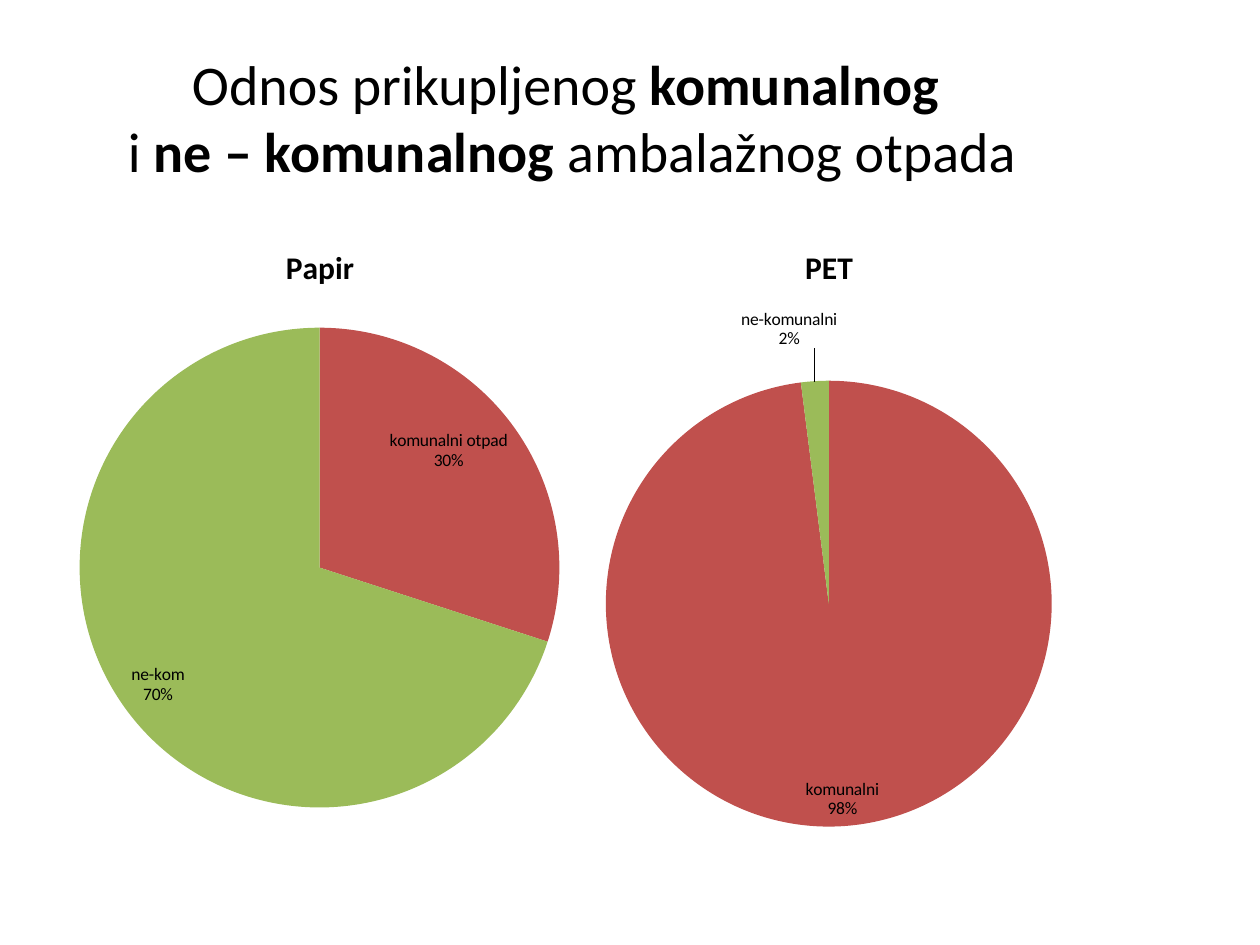
from pptx import Presentation
from pptx.chart.data import CategoryChartData as Data
from pptx.dml.color import RGBColor as RGB
from pptx.enum.chart import XL_CHART_TYPE as Kind, XL_LABEL_POSITION as Pos
from pptx.enum.text import MSO_ANCHOR as Anchor, PP_ALIGN as Align
from pptx.oxml import parse_xml
from pptx.oxml.ns import nsdecls
from pptx.util import Inches, Pt

COLORS = {"text": "000000", "blank": "4F81BD", "city": "C0504D", "other": "9BBB59"}
FONT = "Calibri"
TITLE = [
    [("Odnos prikupljenog ", False), ("komunalnog ", True)],
    [("i ", False), ("ne – komunalnog ", True), ("ambalažnog otpada", False)],
]
PIES = [
    {
        "title": "Papir",
        "box": (0.5, 1.75, 4.08, 4.92),
        "plot": (0.63, 2.6, 3.81, 3.81),
        "cats": ("Papir %", "komunalni otpad", "ne-kom"),
        "vals": (None, 30, 70),
        "shift": None,
    },
    {
        "title": "PET",
        "box": (4.58, 1.75, 4, 4.95),
        "plot": (4.81, 3.02, 3.54, 3.54),
        "cats": ("PET %", "komunalni", "ne-komunalni"),
        "vals": (None, 98, 2),
        "shift": (-0.05, -0.04),
    },
]


def style(font, size, bold=False):
    look = {"name": FONT, "size": Pt(size), "bold": bold}
    for key, val in look.items():
        setattr(font, key, val)
    font.color.rgb = RGB.from_string(COLORS["text"])


def add_title(slide):
    box = slide.shapes.add_textbox(*map(Inches, (0.5, 0.3, 8.08, 1.25)))
    frame = box.text_frame
    for key, val in {"word_wrap": True, "vertical_anchor": Anchor.MIDDLE}.items():
        setattr(frame, key, val)
    para = frame.paragraphs[0]
    para.alignment = Align.CENTER
    for row, line in enumerate(TITLE):
        if row:
            para.add_line_break()
        for text, bold in line:
            run = para.add_run()
            run.text = text
            style(run.font, 32, bold)


def set_plot(chart, box, plot):
    left, top, wide, high = box
    x, y, w, h = plot
    vals = {"x": (x - left) / wide, "y": (y - top) / high, "w": w / wide, "h": h / high}
    tags = "".join(f'<c:{key} val="{val:.3f}"/>' for key, val in vals.items())
    area = chart._chartSpace.chart.plotArea
    for old in area.findall("{*}layout"):
        area.remove(old)
    area.insert(0, parse_xml(
        f'<c:layout {nsdecls("c")}><c:manualLayout><c:layoutTarget val="inner"/>'
        f'<c:xMode val="edge"/><c:yMode val="edge"/>{tags}'
        "</c:manualLayout></c:layout>"))


def add_labels(plot, shift):
    plot.has_data_labels = True
    labels = plot.data_labels
    look = {"show_value": False, "show_category_name": True,
            "show_percentage": True, "position": Pos.INSIDE_END}
    for key, val in look.items():
        setattr(labels, key, val)
    style(labels.font, 10)
    root = labels._element
    root.insert(0, parse_xml(
        f'<c:dLbl {nsdecls("c")}><c:idx val="0"/><c:delete val="1"/></c:dLbl>'))
    if shift:
        x, y = shift
        flags = {"LegendKey": 0, "Val": 0, "CatName": 1,
                 "SerName": 0, "Percent": 1, "BubbleSize": 0}
        shows = "".join(f'<c:show{key} val="{val}"/>' for key, val in flags.items())
        root.insert(1, parse_xml(
            f'<c:dLbl {nsdecls("c")}><c:idx val="2"/><c:layout><c:manualLayout>'
            f'<c:x val="{x}"/><c:y val="{y}"/></c:manualLayout></c:layout>'
            f'<c:dLblPos val="outEnd"/>{shows}</c:dLbl>'))
    plot.series[0]._element.get_or_add_dLbls()
    series = plot.series[0]._element
    series.replace(series.find("{*}dLbls"), root)


def add_pie(slide, pie):
    data = Data()
    data.categories = pie["cats"]
    data.add_series("Series 1", pie["vals"])
    box = map(Inches, pie["box"])
    chart = slide.shapes.add_chart(Kind.PIE, *box, data).chart
    style(chart.font, 10)
    chart.has_legend = False
    chart.has_title = True
    frame = chart.chart_title.text_frame
    frame.text = pie["title"]
    style(frame.paragraphs[0].runs[0].font, 18, True)
    set_plot(chart, pie["box"], pie["plot"])
    plot = chart.plots[0]
    plot.vary_by_categories = True
    for idx, name in enumerate(("blank", "city", "other")):
        fill = plot.series[0].points[idx].format.fill
        fill.solid()
        fill.fore_color.rgb = RGB.from_string(COLORS[name])
    add_labels(plot, pie["shift"])


def main():
    deck = Presentation()
    deck.slide_width, deck.slide_height = Inches(10), Inches(7.5)
    slide = deck.slides.add_slide(deck.slide_layouts[6])
    add_title(slide)
    for pie in PIES:
        add_pie(slide, pie)
    deck.save("out.pptx")


if __name__ == "__main__":
    main()
